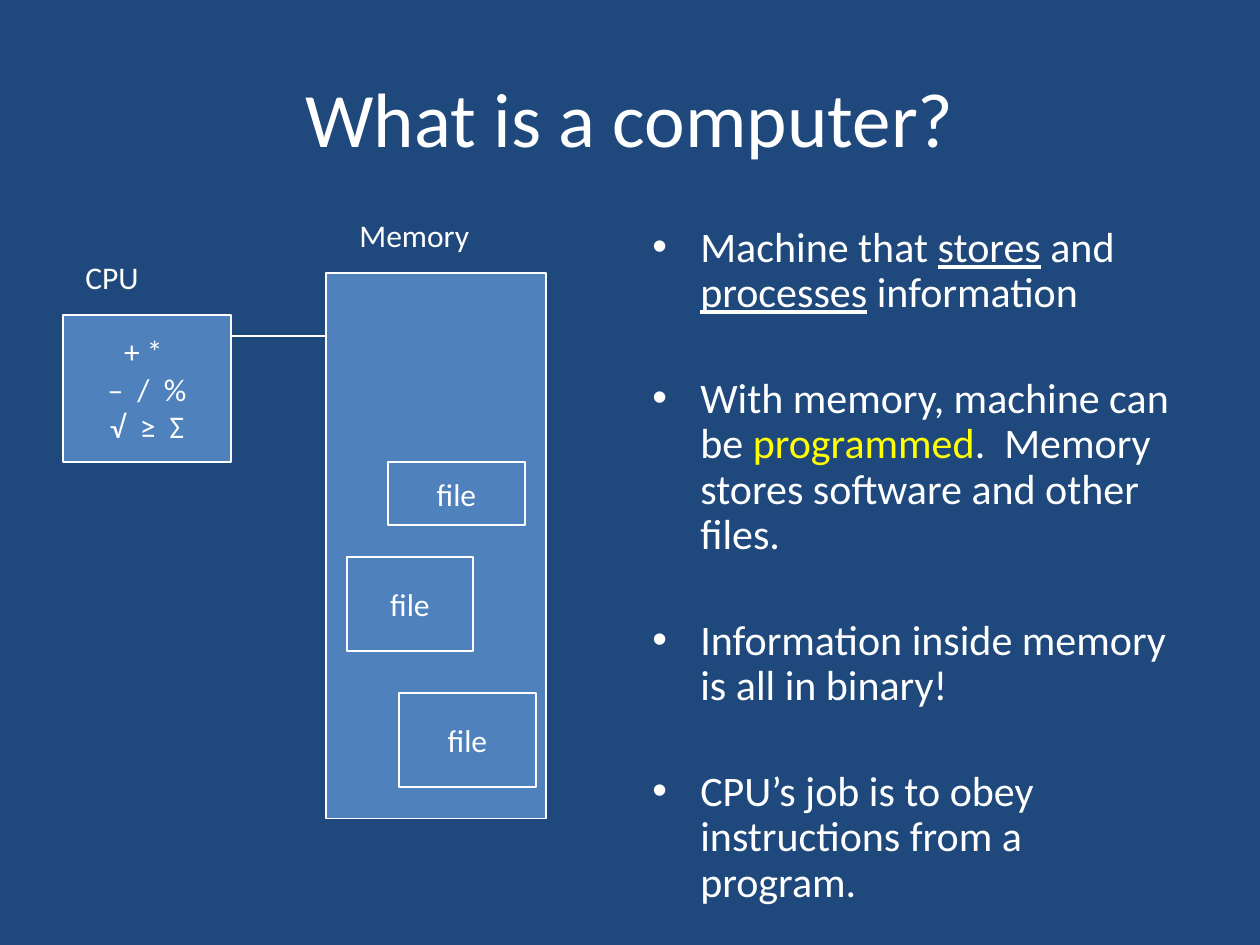
"""Builds the slide "What is a computer?" with a CPU and memory diagram."""
import pptx
import pptx.dml.color
import pptx.enum.shapes
import pptx.enum.text
import pptx.oxml.ns
import pptx.util

PX = 914400 // 126
NAVY, BLUE, WHITE, YELLOW = "1F497D", "4F81BD", "FFFFFF", "FFFF00"
CENTER = pptx.enum.text.PP_ALIGN.CENTER
LEFT = pptx.enum.text.PP_ALIGN.LEFT
MIDDLE = pptx.enum.text.MSO_ANCHOR.MIDDLE

TITLE = ("What is a computer?", (63, 38, 1134, 157))
BULLETS_AT = (640, 220, 557, 725)
HANGING = 48
UNDERLINED = {"underline": True}
BULLETS = [
    [("Machine that ", {}), ("stores", UNDERLINED), (" and ", {}),
     ("processes", UNDERLINED), (" information", {})],
    [("With memory, machine can be ", {}), ("programmed", {"color": YELLOW}),
     (".  Memory stores software and other files.", {})],
    [("Information inside memory is all in binary!", {})],
    [("CPU’s job is to obey instructions from a program.", {})],
]
BOXES = [
    ((63, 315, 168, 147), ["+ * ", "–  /  %", "√  ≥  Σ"]),
    ((326, 273, 220, 546), []),
    ((347, 557, 126, 94), ["file"]),
    ((399, 693, 137, 94), ["file"]),
    ((388, 462, 137, 63), ["file"]),
]
LABELS = [("CPU", (73, 252, 105, 50)), ("Memory", (347, 210, 157, 50))]
BUS = (231, 336, 326, 336)


def emu(lengths):
    return [length * PX for length in lengths]


def rgb(value):
    return pptx.dml.color.RGBColor.from_string(value)


def apply(target, values):
    for name, value in values.items():
        setattr(target, name, value)


def add_run(paragraph, text, size, color=WHITE, **values):
    run = paragraph.add_run()
    run.text = text
    apply(run.font, {"name": "Calibri", "size": pptx.util.Pt(size), **values})
    run.font.color.rgb = rgb(color)


def paragraphs(frame, items):
    for index, item in enumerate(items):
        yield (frame.add_paragraph() if index else frame.paragraphs[0]), item


def write_lines(frame, lines, size, alignment):
    for paragraph, line in paragraphs(frame, lines):
        paragraph.alignment = alignment
        add_run(paragraph, line, size)


def outline(line):
    line.color.rgb = rgb(WHITE)
    line.width = pptx.util.Pt(0.75)


def add_title(slide):
    text, place = TITLE
    title = slide.shapes.title
    apply(title, dict(zip(("left", "top", "width", "height"), emu(place))))
    title.text_frame.vertical_anchor = MIDDLE
    write_lines(title.text_frame, [text], 44, CENTER)


def add_bullets(slide):
    frame = slide.shapes.add_textbox(*emu(BULLETS_AT)).text_frame
    frame.word_wrap = True
    for paragraph, runs in paragraphs(frame, BULLETS):
        gap = 0 if runs is BULLETS[0] else 34.5
        apply(paragraph, {"line_spacing": 0.9, "space_before": pptx.util.Pt(gap)})
        properties = paragraph._p.get_or_add_pPr()
        properties.set("marL", str(HANGING * PX))
        properties.set("indent", str(-HANGING * PX))
        for tag, name, value in (("a:buFont", "typeface", "Arial"), ("a:buChar", "char", "•")):
            element = pptx.oxml.parse_xml(f"<{tag} {pptx.oxml.ns.nsdecls('a')}/>")
            element.set(name, value)
            properties.append(element)
        for text, values in runs:
            add_run(paragraph, text, 24, **values)


def add_box(slide, place, lines):
    box = slide.shapes.add_shape(pptx.enum.shapes.MSO_SHAPE.RECTANGLE, *emu(place))
    box.shadow.inherit = False
    box.fill.solid()
    box.fill.fore_color.rgb = rgb(BLUE)
    outline(box.line)
    apply(box.text_frame, {"word_wrap": False, "vertical_anchor": MIDDLE})
    write_lines(box.text_frame, lines, 18, CENTER)


def add_label(slide, text, place):
    frame = slide.shapes.add_textbox(*emu(place)).text_frame
    frame.word_wrap = True
    write_lines(frame, [text], 18, LEFT)


def add_bus(slide):
    bus = slide.shapes.add_connector(pptx.enum.shapes.MSO_CONNECTOR.STRAIGHT, *emu(BUS))
    outline(bus.line)
    bus._element.spPr.append(pptx.oxml.parse_xml(f"<a:effectLst {pptx.oxml.ns.nsdecls('a')}/>"))


def main():
    presentation = pptx.Presentation()
    apply(presentation, {"slide_width": 1260 * PX, "slide_height": 945 * PX})
    slide = presentation.slides.add_slide(presentation.slide_layouts.get_by_name("Title Only"))
    slide.background.fill.solid()
    slide.background.fill.fore_color.rgb = rgb(NAVY)
    add_title(slide)
    add_bullets(slide)
    for place, lines in BOXES:
        add_box(slide, place, lines)
    for text, place in LABELS:
        add_label(slide, text, place)
    add_bus(slide)
    presentation.save("out.pptx")


if __name__ == "__main__":
    main()
